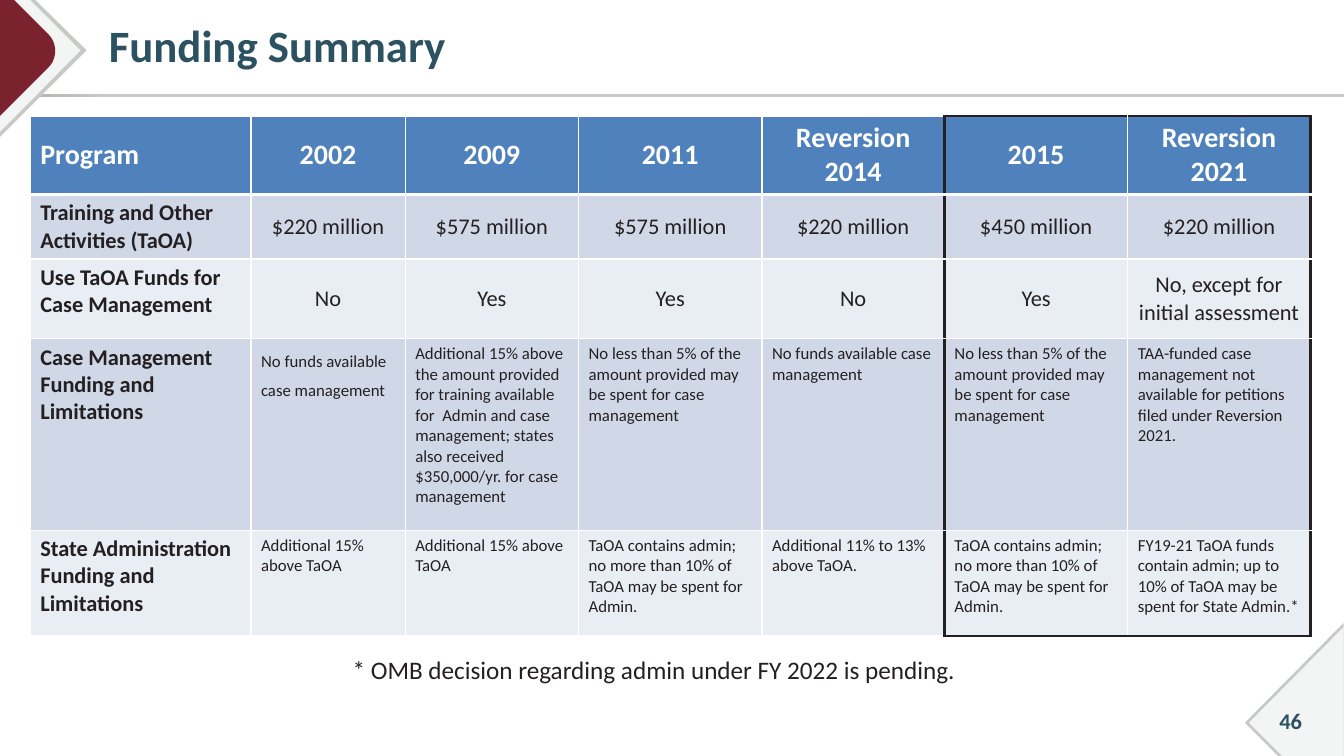
from lxml import etree
from pptx import Presentation
from pptx.dml.color import RGBColor
from pptx.enum.shapes import MSO_SHAPE
from pptx.enum.text import MSO_ANCHOR, PP_ALIGN
from pptx.oxml.ns import qn
from pptx.util import Pt

PX = 9144
RECT = MSO_SHAPE.RECTANGLE
TOP, MIDDLE = MSO_ANCHOR.TOP, MSO_ANCHOR.MIDDLE
LEFT, CENTER = PP_ALIGN.LEFT, PP_ALIGN.CENTER
WHITE = RGBColor(0xFF, 0xFF, 0xFF)
INK = RGBColor(0x24, 0x20, 0x21)
TEAL = RGBColor(0x2C, 0x52, 0x61)
MAROON = RGBColor(0x7A, 0x23, 0x2F)
GRAY = RGBColor(0xC8, 0xC8, 0xC6)
DARK_GRAY = RGBColor(0xAB, 0xAB, 0xA8)
PALE = RGBColor(0xF3, 0xF4, 0xF4)
BLUE = RGBColor(0x4F, 0x81, 0xBD)
BAND_DARK = RGBColor(0xD0, 0xD8, 0xE8)
BAND_LIGHT = RGBColor(0xE9, 0xED, 0xF4)


def set_text(tf, text, size, color, bold=False, align=LEFT, anchor=TOP):
    tf.text = text
    p = tf.paragraphs[0]
    p.alignment = align
    font = {"name": "Calibri", "size": Pt(size), "bold": bold}
    for name, value in font.items():
        setattr(p.runs[0].font, name, value)
    p.runs[0].font.color.rgb = color
    tf.vertical_anchor = anchor
    return p


def add_border(cell, side, color, width):
    ln = etree.SubElement(cell._tc.get_or_add_tcPr(), qn("a:ln" + side), w=str(Pt(width)))
    fill = etree.SubElement(ln, qn("a:solidFill"))
    etree.SubElement(fill, qn("a:srgbClr"), val=str(color))


prs = Presentation()
prs.slide_width, prs.slide_height = 12192000, 6858000
s = prs.slides.add_slide(prs.slide_layouts[5])

rule = s.shapes.add_shape(RECT, 0, 93 * PX, prs.slide_width, 3 * PX)
rule.shadow.inherit = False
rule.line.fill.background()
rule.fill.gradient()
rule.fill.gradient_angle = 0
for stop, color, position in zip(rule.fill.gradient_stops, (DARK_GRAY, GRAY), (0, 0.08)):
    stop.color.rgb = color
    stop.position = position

curve = []
for i in range(13):
    t = i / 12
    weights = ((1 - t) ** 3, 3 * t * (1 - t) ** 2, 3 * t ** 2 * (1 - t), t ** 3)
    curve.append(tuple(sum(w * v for w, v in zip(weights, axis))
                       for axis in ((48, 57, 57, 48), (34, 43, 58, 67))))

corners = [
    (GRAY, [(0, 0), (35, 0), (86, 50), (0, 136)]),
    (PALE, [(0, 0), (30, 0), (80, 50), (0, 131)]),
    (MAROON, [(0, 0), (14, 0), *curve, (0, 115)]),
    (GRAY, [(1333, 618), (1333, 750), (1268, 750), (1235, 717)]),
    (PALE, [(1333, 622), (1333, 750), (1272, 750), (1239, 717)]),
]
for color, points in corners:
    points = [(x * PX, y * PX) for x, y in points]
    fb = s.shapes.build_freeform(*points[0])
    fb.add_line_segments(points[1:], close=True)
    sp = fb.convert_to_shape()
    sp.shadow.inherit = False
    sp.fill.solid()
    sp.fill.fore_color.rgb = color
    sp.line.fill.background()

title = s.shapes.title
title.left, title.top, title.width, title.height = 88 * PX, 5 * PX, 1212 * PX, 86 * PX
title.text_frame.margin_left = 20 * PX
p = set_text(title.text_frame, "Funding Summary", 32, TEAL, True, LEFT, MIDDLE)
p.line_spacing = 0.9

number = s.shapes.add_textbox(1245 * PX, 695 * PX, 71 * PX, 40 * PX)
number.text_frame.word_wrap = True
set_text(number.text_frame, "46", 16, TEAL, True, CENTER, MIDDLE)

rows = [
    ["Program", "2002", "2009", "2011", "Reversion 2014", "2015", "Reversion 2021"],
    ["Training and Other Activities (TaOA)", "$220 million", "$575 million", "$575 million",
     "$220 million", "$450 million", "$220 million"],
    ["Use TaOA Funds for Case Management", "No", "Yes", "Yes", "No", "Yes",
     "No, except for initial assessment"],
    ["Case Management Funding and Limitations",
     "No funds available case management",
     "Additional 15% above the amount provided for training available for  Admin and case "
     "management; states also received $350,000/yr. for case management",
     "No less than 5% of the amount provided may be spent for case management",
     "No funds available case management",
     "No less than 5% of the amount provided may be spent for case management",
     "TAA-funded case management not available for petitions filed under Reversion 2021."],
    ["State Administration Funding and Limitations",
     "Additional 15% above TaOA",
     "Additional 15% above TaOA",
     "TaOA contains admin; no more than 10% of TaOA may be spent for Admin.",
     "Additional 11% to 13% above TaOA.",
     "TaOA contains admin; no more than 10% of TaOA may be spent for Admin.",
     "FY19-21 TaOA funds contain admin; up to 10% of TaOA may be spent for State Admin.*"],
]
widths = [219, 153, 172, 182, 181, 182, 181]
heights = [78, 64, 79, 190, 105]
fills = [BLUE, BAND_DARK, BAND_LIGHT, BAND_DARK, BAND_LIGHT]
sizes = [20, 16, 16, 12, 12]
last = len(rows) - 1

table = s.shapes.add_table(len(rows), len(widths), 30 * PX, 115 * PX,
                           sum(widths) * PX, sum(heights) * PX).table
for column, width in zip(table.columns, widths):
    column.width = width * PX
for r, row in enumerate(rows):
    table.rows[r].height = heights[r] * PX
    for c, text in enumerate(row):
        cell = table.cell(r, c)
        boxed = c >= 5
        dark = {"L": c == 5, "R": c in (4, 6), "T": boxed and r == 0, "B": boxed and r == last}
        for side, is_dark in dark.items():
            header_edge = (r, side) in ((0, "B"), (1, "T"))
            add_border(cell, side, INK if is_dark else WHITE,
                       2.25 if is_dark else 3 if header_edge else 1)
        cell.fill.solid()
        cell.fill.fore_color.rgb = fills[r]
        centered = c > 0 and r < 3
        set_text(cell.text_frame, text, 16 if c == 0 and r else sizes[r],
                 INK if r else WHITE, r == 0 or c == 0, CENTER if centered else LEFT)
        cell.vertical_anchor = MIDDLE if r == 0 or centered else TOP
table.cell(3, 1).text_frame.paragraphs[0].line_spacing = 1.4

note = s.shapes.add_textbox(340 * PX, 644 * PX, 625 * PX, 40 * PX)
note.text_frame.word_wrap = False
set_text(note.text_frame, "* OMB decision regarding admin under FY 2022 is pending.", 18, INK)

prs.save("out.pptx")
